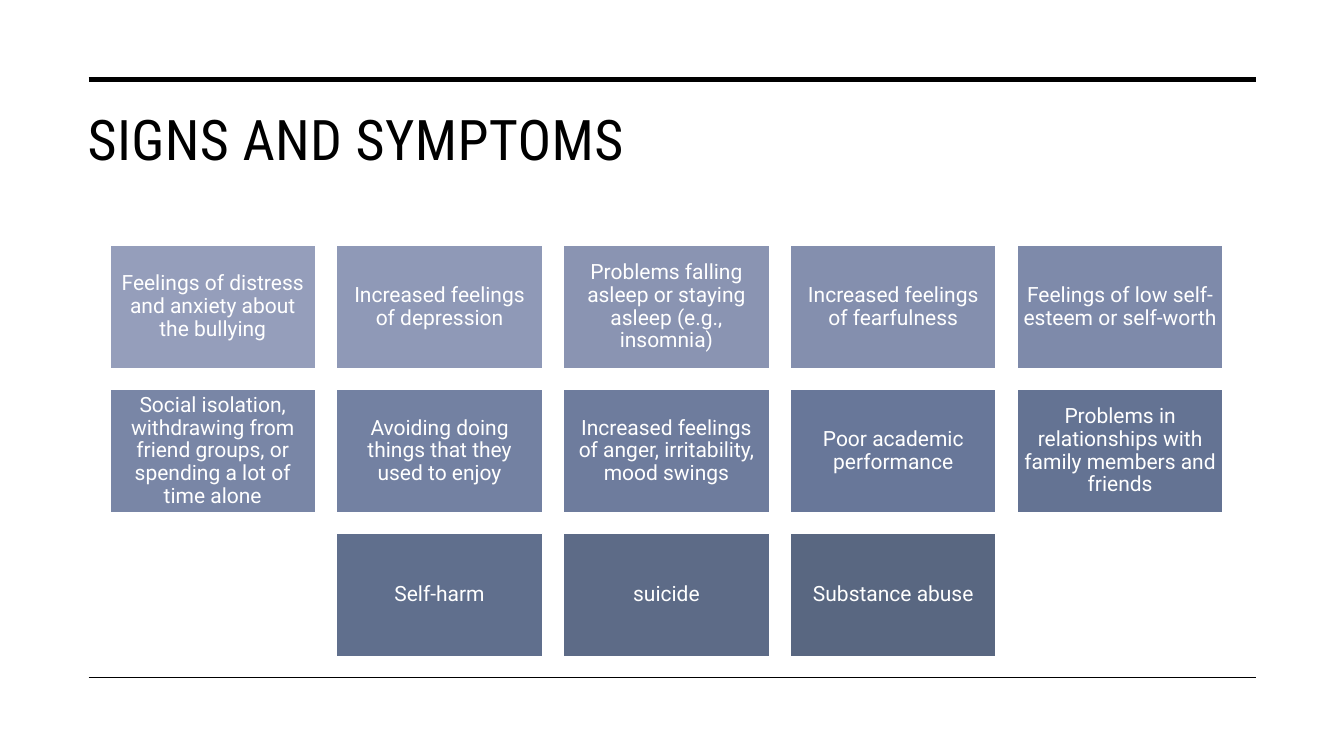
from dataclasses import dataclass

from lxml.etree import SubElement
from pptx import Presentation
from pptx.dml.color import RGBColor
from pptx.enum.shapes import MSO_CONNECTOR, MSO_SHAPE
from pptx.enum.text import MSO_ANCHOR, MSO_AUTO_SIZE, PP_ALIGN
from pptx.oxml.ns import qn
from pptx.util import Inches, Pt


@dataclass(frozen=True)
class Theme:
    title_font: str = "Roboto Condensed"
    body_font: str = "Roboto"
    title_size: float = 40
    body_size: float = 15
    title_spacing: float = 0.3
    ink: RGBColor = RGBColor(0x00, 0x00, 0x00)
    paper: RGBColor = RGBColor(0xFF, 0xFF, 0xFF)
    # Tile shades run from light through middle to dark
    light: RGBColor = RGBColor(0x95, 0x9E, 0xBB)
    middle: RGBColor = RGBColor(0x68, 0x77, 0x99)
    dark: RGBColor = RGBColor(0x59, 0x67, 0x81)


THEME = Theme()

# Grid in inches
RULE_LEFT, RULE_RIGHT = 0.88, 12.46
GRID_LEFT, GRID_TOP = 1.09, 2.43
TILE_WIDTH, TILE_HEIGHT = 2.04, 1.23
COLUMN_STEP, ROW_STEP = 2.25, 1.43
COLUMNS = 5
MIDDLE_TILE = 8

SYMPTOM_ROWS = [
    [
        "Feelings of distress and anxiety about the bullying",
        "Increased feelings of depression",
        "Problems falling asleep or staying asleep (e.g., insomnia)",
        "Increased feelings of fearfulness",
        "Feelings of low self-esteem or self-worth",
    ],
    [
        "Social isolation, withdrawing from friend groups, or spending a lot of time alone",
        "Avoiding doing things that they used to enjoy",
        "Increased feelings of anger, irritability, mood swings",
        "Poor academic performance",
        "Problems in relationships with family members and friends",
    ],
    ["Self-harm", "suicide", "Substance abuse"],
]


def blend(start, end, share):
    return RGBColor(*(round(a + (b - a) * share) for a, b in zip(start, end)))


def tile_shade(index, count):
    if index <= MIDDLE_TILE:
        return blend(THEME.light, THEME.middle, index / MIDDLE_TILE)
    share = (index - MIDDLE_TILE) / (count - 1 - MIDDLE_TILE)
    return blend(THEME.middle, THEME.dark, share)


def style_font(paragraph, name, size, color):
    paragraph.font.name = name
    paragraph.font.size = Pt(size)
    paragraph.font.color.rgb = color


def add_title(slide, text):
    title = slide.shapes.title
    title.left, title.top = Inches(0.77), Inches(0.99)
    title.width, title.height = Inches(11.69), Inches(1.26)
    frame = title.text_frame
    frame.text = text
    frame.word_wrap = True
    frame.auto_size = MSO_AUTO_SIZE.NONE
    frame.vertical_anchor = MSO_ANCHOR.TOP
    paragraph = frame.paragraphs[0]
    paragraph.alignment = PP_ALIGN.LEFT
    style_font(paragraph, THEME.title_font, THEME.title_size, THEME.ink)
    # Letter spacing is stored in hundredths of a point
    properties = paragraph.runs[0].font._element
    properties.set("spc", str(round(THEME.title_spacing * 100)))


def add_rule(slide, top, weight):
    rule = slide.shapes.add_connector(
        MSO_CONNECTOR.STRAIGHT,
        Inches(RULE_LEFT), Inches(top), Inches(RULE_RIGHT), Inches(top),
    )
    rule.line.color.rgb = THEME.ink
    rule.line.width = Pt(weight)
    SubElement(rule._element.spPr, qn("a:effectLst"))


def add_tile(slide, column, row, text, shade):
    tile = slide.shapes.add_shape(
        MSO_SHAPE.RECTANGLE,
        Inches(GRID_LEFT + column * COLUMN_STEP),
        Inches(GRID_TOP + row * ROW_STEP),
        Inches(TILE_WIDTH), Inches(TILE_HEIGHT),
    )
    tile.shadow.inherit = False
    tile.fill.solid()
    tile.fill.fore_color.rgb = shade
    tile.line.color.rgb = THEME.paper
    tile.line.width = Pt(1)
    frame = tile.text_frame
    frame.text = text
    frame.word_wrap = True
    frame.vertical_anchor = MSO_ANCHOR.MIDDLE
    frame.margin_left = frame.margin_right = Inches(0.06)
    frame.margin_top = frame.margin_bottom = Inches(0.06)
    paragraph = frame.paragraphs[0]
    paragraph.alignment = PP_ALIGN.CENTER
    paragraph.line_spacing = 0.9
    style_font(paragraph, THEME.body_font, THEME.body_size, THEME.paper)


def add_symptom_grid(slide):
    count = sum(len(symptoms) for symptoms in SYMPTOM_ROWS)
    index = 0
    for row, symptoms in enumerate(SYMPTOM_ROWS):
        # Shorter rows are centred
        first_column = (COLUMNS - len(symptoms)) / 2
        for offset, symptom in enumerate(symptoms):
            shade = tile_shade(index, count)
            add_tile(slide, first_column + offset, row, symptom, shade)
            index += 1


def main():
    presentation = Presentation()
    presentation.slide_width = Inches(13.33)
    presentation.slide_height = Inches(7.5)
    title_only = presentation.slide_layouts[5]
    slide = presentation.slides.add_slide(title_only)

    # Title between the heavy top rule and the fine bottom rule
    add_title(slide, "SIGNS AND SYMPTOMS")
    add_rule(slide, 0.79, 3.5)
    add_rule(slide, 6.72, 1)

    # Symptom tiles
    add_symptom_grid(slide)

    presentation.save("out.pptx")


if __name__ == "__main__":
    main()
